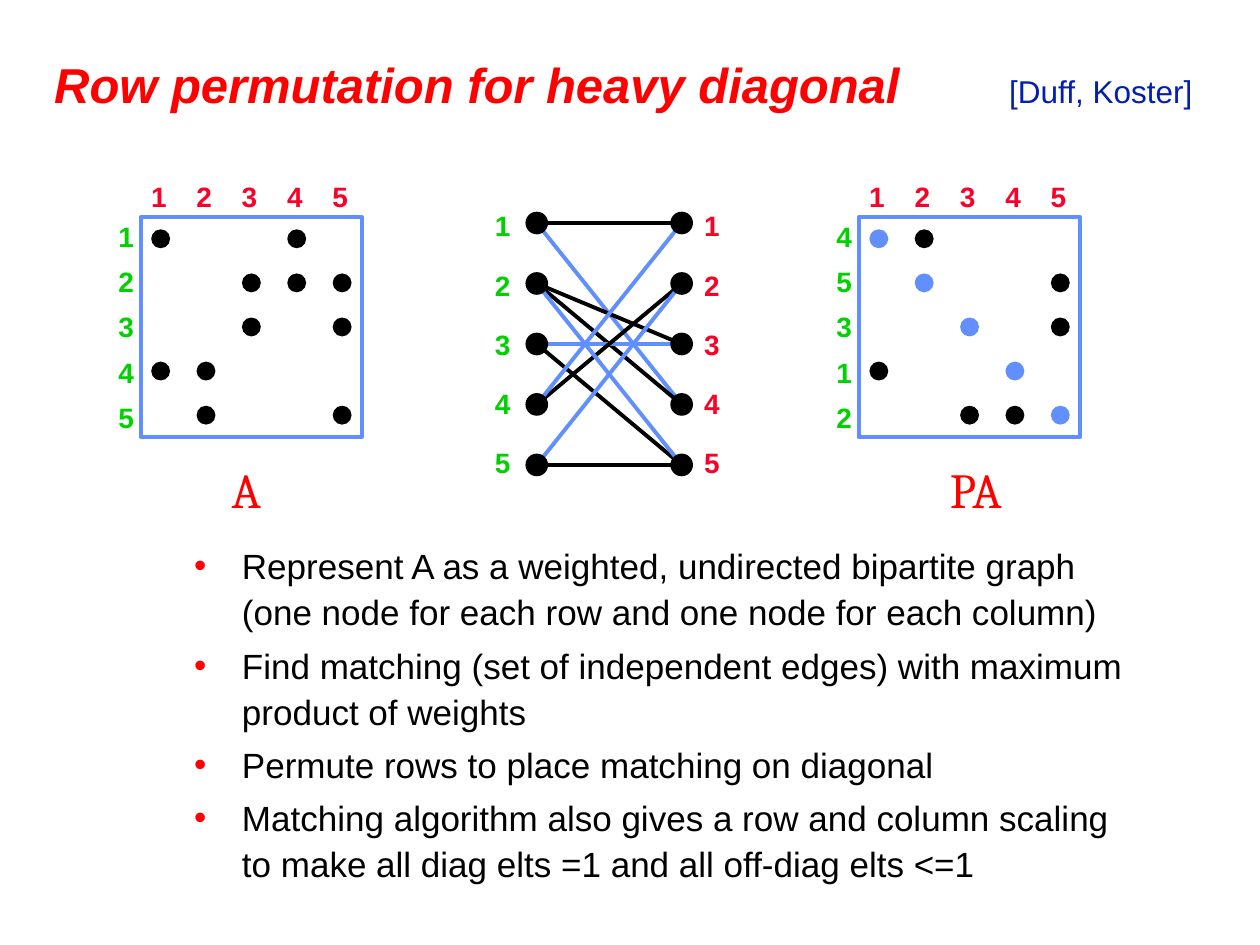
"""Build a slide on permuting matrix rows to get a heavy diagonal."""
from lxml.etree import SubElement
from pptx import Presentation
from pptx.dml.color import RGBColor
from pptx.enum.shapes import MSO_CONNECTOR, MSO_SHAPE
from pptx.enum.text import MSO_ANCHOR, MSO_AUTO_SIZE, PP_ALIGN
from pptx.oxml.ns import qn
from pptx.util import Inches, Pt

RED = RGBColor(0xFF, 0x00, 0x00)
NAVY = RGBColor(0x02, 0x1F, 0xAE)
BLACK = RGBColor(0x00, 0x00, 0x00)
BLUE = RGBColor(0x61, 0x8F, 0xFD)
CRIMSON = RGBColor(0xFC, 0x01, 0x28)
GREEN = RGBColor(0x00, 0xD2, 0x00)

ROWS = [1, 2, 3, 4, 5]
MATCH = [4, 5, 3, 1, 2]
EDGES = [(1, 4), (2, 4), (2, 3), (1, 1), (3, 3), (5, 5),
         (3, 5), (4, 2), (5, 2), (4, 1), (2, 5)]
POINTS = [
    "Represent A as a weighted, undirected bipartite graph (one node for each row and one node for each column)",
    "Find matching (set of independent edges) with maximum product of weights",
    "Permute rows to place matching on diagonal",
    "Matching algorithm also gives a row and column scaling \vto make all diag elts =1 and all off-diag elts <=1",
]


def label(shapes, text, x, y, color, size=16, font="Arial", width=0.32, height=0.37):
    box = shapes.add_textbox(Inches(x), Inches(y), Inches(width), Inches(height))
    frame = box.text_frame
    frame.word_wrap = False
    frame.auto_size = MSO_AUTO_SIZE.SHAPE_TO_FIT_TEXT
    para = frame.paragraphs[0]
    para.text = text
    para.font.name = font
    para.font.size = Pt(size)
    para.font.bold = font == "Arial"
    para.font.color.rgb = color


def dot(shapes, x, y, size, color):
    oval = shapes.add_shape(MSO_SHAPE.OVAL, Inches(x), Inches(y), Inches(size), Inches(size))
    oval.shadow.inherit = False
    oval.fill.solid()
    oval.fill.fore_color.rgb = color
    oval.line.fill.background()


deck = Presentation()
deck.slide_width, deck.slide_height = Inches(10), Inches(7.5)
slide = deck.slides.add_slide(deck.slide_layouts[1])

title = slide.shapes.title
title.left, title.top = Inches(0.33), Inches(0.33)
title.width, title.height = Inches(9.42), Inches(0.67)
title.text_frame.auto_size = MSO_AUTO_SIZE.NONE
title.text_frame.vertical_anchor = MSO_ANCHOR.MIDDLE
head = title.text_frame.paragraphs[0]
head.alignment = PP_ALIGN.LEFT
tabs = SubElement(head._p.get_or_add_pPr(), qn("a:tabLst"))
SubElement(tabs, qn("a:tab"), pos=str(Inches(7.58)), algn="l")
for text, size, color, strong in [
    ("Row permutation for heavy diagonal\t", 28, RED, True),
    ("[Duff, Koster]", 18, NAVY, False),
]:
    run = head.add_run()
    run.text = text
    run.font.name = "Arial"
    run.font.size = Pt(size)
    run.font.bold = run.font.italic = strong
    run.font.color.rgb = color

body = slide.placeholders[1]
body.left, body.top = Inches(1.44), Inches(4.24)
body.width, body.height = Inches(7.75), Inches(2.92)
frame = body.text_frame
frame.auto_size = MSO_AUTO_SIZE.NONE
for i, text in enumerate(POINTS):
    para = frame.add_paragraph() if i else frame.paragraphs[0]
    para.text = text
    para.line_spacing = 1.1
    para.font.name = "Arial"
    para.font.size = Pt(20)
    para.font.color.rgb = BLACK
    props = para._p.get_or_add_pPr()
    props.set("marL", str(Inches(0.38)))
    props.set("indent", str(-Inches(0.38)))
    tint = SubElement(props, qn("a:buClr"))
    SubElement(tint, qn("a:srgbClr"), val=str(RED))
    SubElement(props, qn("a:buChar"), char="•")
    props.append(props.find(qn("a:defRPr")))

graph = slide.shapes.add_group_shape().shapes
for row, col in EDGES:
    edge = graph.add_connector(
        MSO_CONNECTOR.STRAIGHT,
        Inches(4.26), Inches(1.29 + 0.48 * row),
        Inches(5.41), Inches(1.29 + 0.48 * col),
    )
    edge.line.width = Pt(2.25)
    edge.line.color.rgb = BLUE if MATCH[col - 1] == row else BLACK
    SubElement(edge._element.spPr, qn("a:effectLst"))
for i, num in enumerate(ROWS):
    for node, mark, color in [(4.17, 3.83, GREEN), (5.32, 5.49, CRIMSON)]:
        dot(graph, node, 1.68 + 0.48 * i, 0.18, BLACK)
        label(graph, str(num), mark, 1.61 + 0.47 * i, color)

for name, left, order, tone, width in [
    ("A", 1.12, ROWS, BLACK, 0.48),
    ("PA", 6.82, MATCH, BLUE, 0.7),
]:
    grid = slide.shapes.add_group_shape().shapes
    for row, col in EDGES:
        color = tone if MATCH[col - 1] == row else BLACK
        dot(grid, left + 0.08 + 0.36 * (col - 1), 1.82 + 0.35 * order.index(row), 0.15, color)
    square = grid.add_shape(MSO_SHAPE.RECTANGLE, Inches(left), Inches(1.72), Inches(1.75), Inches(1.75))
    square.shadow.inherit = False
    square.fill.background()
    square.line.color.rgb = BLUE
    square.line.width = Pt(2.25)
    for i, num in enumerate(order):
        label(grid, str(i + 1), left - 0.02 + 0.36 * i, 1.38, CRIMSON)
        label(grid, str(num), left - 0.28, 1.69 + 0.36 * i, GREEN)
    label(grid, name, left + 0.62, 3.6, RED, 28, "Cambria", width, 0.57)

deck.save("out.pptx")
